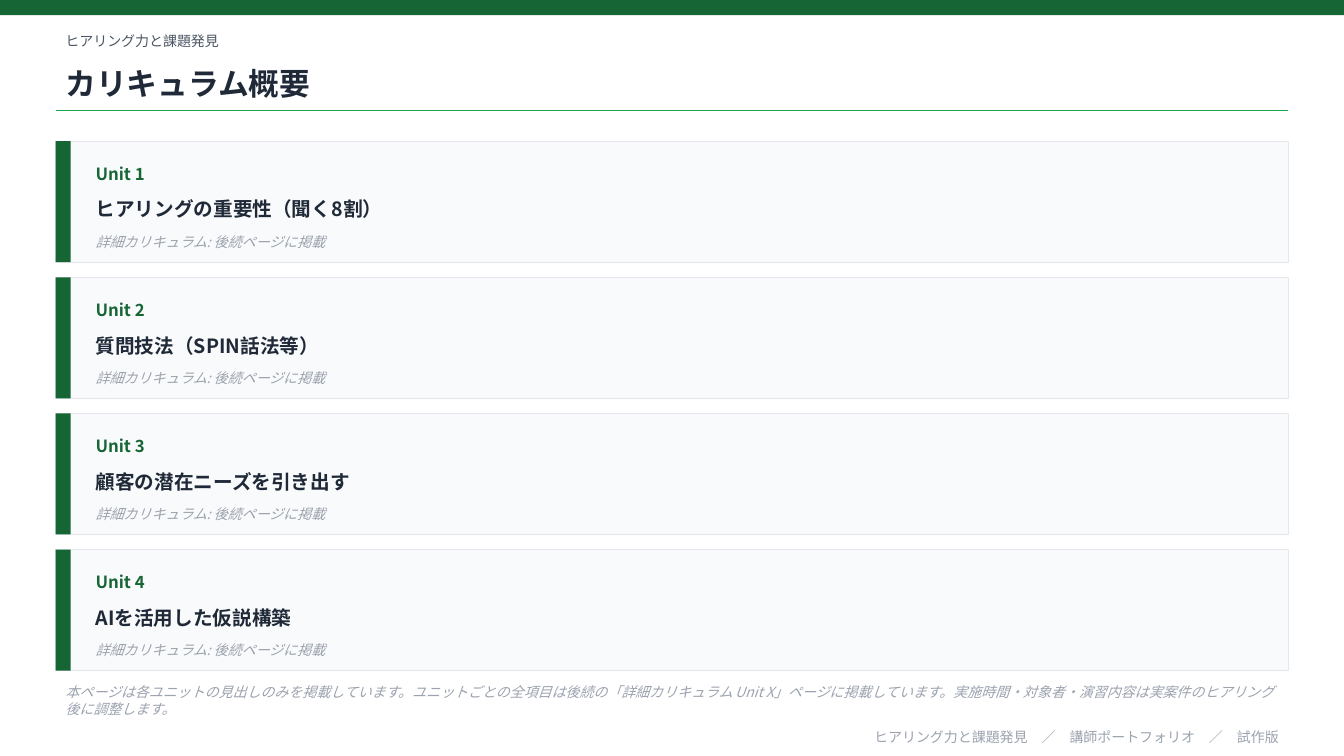
from lxml.etree import SubElement as Sub
from pptx import Presentation
from pptx.dml.color import RGBColor as Rgb
from pptx.enum.shapes import MSO_CONNECTOR as Link, MSO_SHAPE as Kind
from pptx.enum.text import MSO_ANCHOR as Anchor, PP_ALIGN as Align
from pptx.oxml.ns import qn
from pptx.util import Cm, Pt

TOPIC = "ヒアリング力と課題発見"
TITLE = "カリキュラム概要"
UNITS = [
    "ヒアリングの重要性（聞く8割）",
    "質問技法（SPIN話法等）",
    "顧客の潜在ニーズを引き出す",
    "AIを活用した仮説構築",
]
DETAIL = "詳細カリキュラム: 後続ページに掲載"
NOTE = (
    "本ページは各ユニットの見出しのみを掲載しています。"
    "ユニットごとの全項目は後続の「詳細カリキュラム Unit X」ページに掲載しています。"
    "実施時間・対象者・演習内容は実案件のヒアリング後に調整します。"
)
FOOTER = f"{TOPIC}　／　講師ポートフォリオ　／　試作版"

FONT = "Noto Sans CJK JP"
COLORS = {
    "green": "166534", "rule": "16A34A", "card": "F9FAFB", "edge": "E5E7EB",
    "ink": "1F2937", "slate": "4B5563", "muted": "9CA3AF",
}
STYLES = {
    "topic": ("slate", {"size": Pt(10)}),
    "title": ("ink", {"size": Pt(22), "bold": True}),
    "unit": ("green", {"size": Pt(12), "bold": True}),
    "head": ("ink", {"size": Pt(14), "bold": True}),
    "note": ("muted", {"size": Pt(10), "italic": True}),
    "footer": ("muted", {"size": Pt(10)}),
}

WIDTH, HEIGHT = 33.87, 19.05
LEFT, BAR = 1.4, 0.38
SPAN = WIDTH - 2 * LEFT
TOP, TALL, STEP = 3.56, 3.05, 3.43
INDENT = 0.76
INNER = SPAN - 2 * INDENT + 0.25


def color(name):
    return Rgb.from_string(COLORS[name])


def add_rect(slide, x, y, w, h, fill, edge=None):
    rect = slide.shapes.add_shape(Kind.RECTANGLE, Cm(x), Cm(y), Cm(w), Cm(h))
    rect.shadow.inherit = False
    rect.fill.solid()
    rect.fill.fore_color.rgb = color(fill)
    if edge:
        rect.line.color.rgb = color(edge)
        rect.line.width = Pt(0.5)
    else:
        rect.line.fill.background()


def add_text(slide, x, y, w, h, text, style, align=Align.LEFT):
    frame = slide.shapes.add_textbox(Cm(x), Cm(y), Cm(w), Cm(h)).text_frame
    frame.word_wrap = True
    frame.vertical_anchor = Anchor.MIDDLE
    para = frame.paragraphs[0]
    para.alignment = align
    run = para.add_run()
    run.text = text
    tint, form = STYLES[style]
    for key, value in {"name": FONT, **form}.items():
        setattr(run.font, key, value)
    run.font.color.rgb = color(tint)
    Sub(run.font._element, qn("a:ea"), typeface=FONT)


def add_rule(slide, y):
    rule = slide.shapes.add_connector(
        Link.STRAIGHT, Cm(LEFT), Cm(y), Cm(LEFT + SPAN), Cm(y))
    rule.line.color.rgb = color("rule")
    rule.line.width = Pt(1)
    Sub(rule._element.spPr, qn("a:effectLst"))


def add_card(slide, index, head):
    y = TOP + index * STEP
    x = LEFT + INDENT
    add_rect(slide, LEFT, y, SPAN, TALL, "card", "edge")
    add_rect(slide, LEFT, y, BAR, TALL, "green")
    add_text(slide, x, y + 0.3, 3.81, 1.02, f"Unit {index + 1}", "unit")
    add_text(slide, x, y + 1.14, INNER, 1.14, head, "head")
    add_text(slide, x, y + 2.16, INNER, 0.76, DETAIL, "note")


def main():
    deck = Presentation()
    deck.slide_width, deck.slide_height = Cm(WIDTH), Cm(HEIGHT)
    slide = deck.slides.add_slide(deck.slide_layouts[6])
    add_rect(slide, 0, 0, WIDTH, BAR, "green")
    add_text(slide, LEFT, 0.64, SPAN, 0.76, TOPIC, "topic")
    add_text(slide, LEFT, 1.4, SPAN, 1.4, TITLE, "title")
    add_rule(slide, 2.79)
    for index, head in enumerate(UNITS):
        add_card(slide, index, head)
    add_text(slide, LEFT, 17.15, SPAN, 1.02, NOTE, "note")
    add_text(slide, LEFT, 18.29, SPAN, 0.56, FOOTER, "footer", Align.RIGHT)
    deck.save("out.pptx")


if __name__ == "__main__":
    main()
